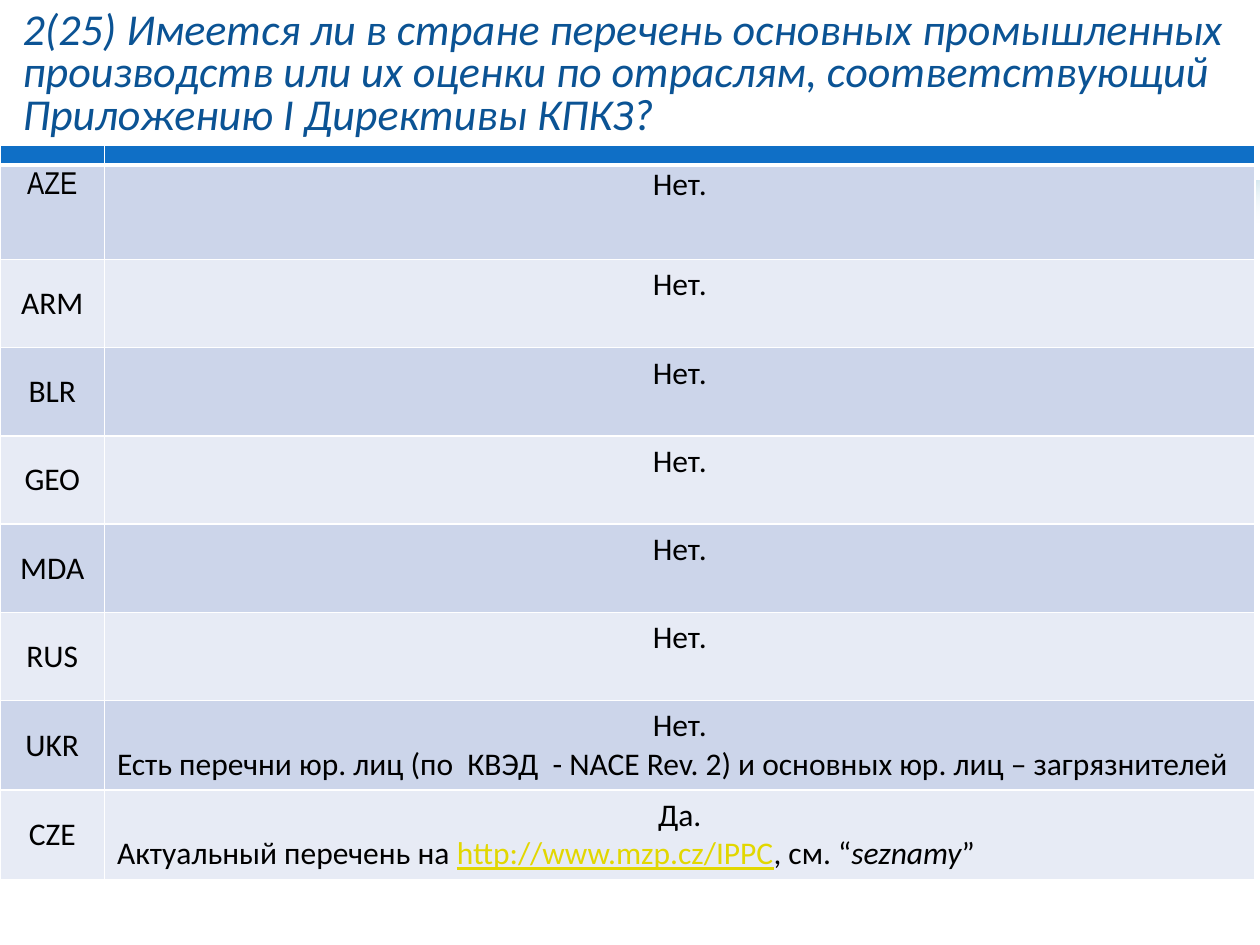
from lxml import etree
from pptx import Presentation
from pptx.dml.color import RGBColor
from pptx.enum.shapes import MSO_SHAPE
from pptx.enum.text import MSO_ANCHOR, MSO_AUTO_SIZE, PP_ALIGN
from pptx.oxml import parse_xml
from pptx.oxml.ns import nsdecls, qn
from pptx.util import Inches, Pt

COLORS = {
    "white": "FFFFFF", "title": "0B5394", "header": "0F6FC6", "text": "000000",
    "odd": "CCD5EA", "even": "E7EBF5", "link": "E2D700", "shadow": "0076A3",
}
TITLE = ("2(25) Имеется ли в стране перечень основных промышленных производств "
         "или их оценки по отраслям, соответствующий Приложению I Директивы КПКЗ?")
NO = "Нет."
LINK = {"color": "link", "underline": True}

# Country, answer, and the runs of an optional remark
ANSWERS = [(country, NO, []) for country in ("AZE", "ARM", "BLR", "GEO", "MDA", "RUS")] + [
    ("UKR", NO, [("Есть перечни юр. лиц (по  КВЭД  - NACE Rev. 2) "
                  "и основных юр. лиц – загрязнителей", {})]),
    ("CZE", "Да.", [("Актуальный перечень на ", {}), ("http://www.mzp.cz/IPPC", LINK),
                    (", см. “", {}), ("seznamy", {"italic": True}), ("”", {})]),
]
COLUMN_WIDTHS = [0.83, 9.13]
ROW_HEIGHTS = [0.16, 0.75] + [0.7] * 7


def rgb(name):
    return RGBColor.from_string(COLORS[name])


def add_run(paragraph, text, size=18, color="text", **formats):
    run = paragraph.add_run()
    run.text = text
    run.font.color.rgb = rgb(color)
    for attribute, value in {"name": "Calibri", "size": Pt(size), **formats}.items():
        setattr(run.font, attribute, value)


def add_banner(slide):
    banner = slide.shapes.add_shape(
        MSO_SHAPE.FLOWCHART_DOCUMENT, 0, 0, Inches(10), Inches(1.78))
    banner.fill.solid()
    banner.fill.fore_color.rgb = rgb("white")
    banner.line.fill.background()
    banner._element.spPr.append(parse_xml(
        f'<a:effectLst {nsdecls("a")}><a:outerShdw blurRad="{Pt(22)}" dist="{Pt(3)}" '
        f'dir="5400000" rotWithShape="0"><a:srgbClr val="{COLORS["shadow"]}">'
        '<a:alpha val="40000"/></a:srgbClr></a:outerShdw></a:effectLst>'))
    # Behind the title
    slide.shapes._spTree.insert(2, banner._element)


def set_title(slide):
    title = slide.shapes.title
    title.left, title.top = Inches(0.08), Inches(0.13)
    title.width, title.height = Inches(9.88), Inches(0.93)
    frame = title.text_frame
    frame.auto_size = MSO_AUTO_SIZE.NONE
    frame.vertical_anchor = MSO_ANCHOR.MIDDLE
    paragraph = frame.paragraphs[0]
    paragraph.alignment = PP_ALIGN.LEFT
    paragraph.line_spacing = 0.8
    add_run(paragraph, TITLE, size=25.2, color="title", italic=True)


def set_margins(cell, horizontal, top, bottom):
    cell.margin_left = cell.margin_right = Inches(horizontal)
    cell.margin_top, cell.margin_bottom = Inches(top), Inches(bottom)


def style_cell(cell, fill, bottom=1):
    cell.fill.solid()
    cell.fill.fore_color.rgb = rgb(fill)
    properties = cell._tc.get_or_add_tcPr()
    widths = {"a:lnL": 1, "a:lnR": 1, "a:lnT": 1, "a:lnB": bottom}
    # Borders come before the fill
    for index, (tag, width) in enumerate(widths.items()):
        border = etree.Element(qn(tag), w=str(Pt(width)))
        solid = etree.SubElement(border, qn("a:solidFill"))
        etree.SubElement(solid, qn("a:srgbClr"), val=COLORS["white"])
        properties.insert(index, border)


def write_centered(cell, text, **formats):
    paragraph = cell.text_frame.paragraphs[0]
    paragraph.alignment = PP_ALIGN.CENTER
    add_run(paragraph, text, **formats)


def add_answers(slide):
    table = slide.shapes.add_table(
        len(ROW_HEIGHTS), len(COLUMN_WIDTHS), 0, Inches(1.15),
        Inches(sum(COLUMN_WIDTHS)), Inches(sum(ROW_HEIGHTS))).table
    for column, width in zip(table.columns, COLUMN_WIDTHS):
        column.width = Inches(width)
    for row, height in zip(table.rows, ROW_HEIGHTS):
        row.height = Inches(height)

    # Thin header band
    for cell in table.rows[0].cells:
        style_cell(cell, "header", bottom=3)
        set_margins(cell, 0, 0, 0)
        cell.text_frame.paragraphs[0]._p.get_or_add_endParaRPr().set("sz", "800")

    # Countries and their answers
    for index, (country, answer, remark) in enumerate(ANSWERS, start=1):
        country_cell, answer_cell = table.rows[index].cells
        for cell in (country_cell, answer_cell):
            style_cell(cell, "odd" if index % 2 else "even")
        first = index == 1
        country_cell.vertical_anchor = MSO_ANCHOR.TOP if first else MSO_ANCHOR.MIDDLE
        write_centered(country_cell, country, name="Arial Narrow" if first else "Calibri")
        write_centered(answer_cell, answer)
        if first:
            set_margins(answer_cell, 0.02, 0, 0)
        if remark:
            paragraph = answer_cell.text_frame.add_paragraph()
            for text, formats in remark:
                add_run(paragraph, text, **formats)


def main():
    presentation = Presentation()
    presentation.slide_width, presentation.slide_height = Inches(10), Inches(7.5)
    slide = presentation.slides.add_slide(presentation.slide_layouts[5])
    add_banner(slide)
    set_title(slide)
    add_answers(slide)
    presentation.save("out.pptx")


if __name__ == "__main__":
    main()
